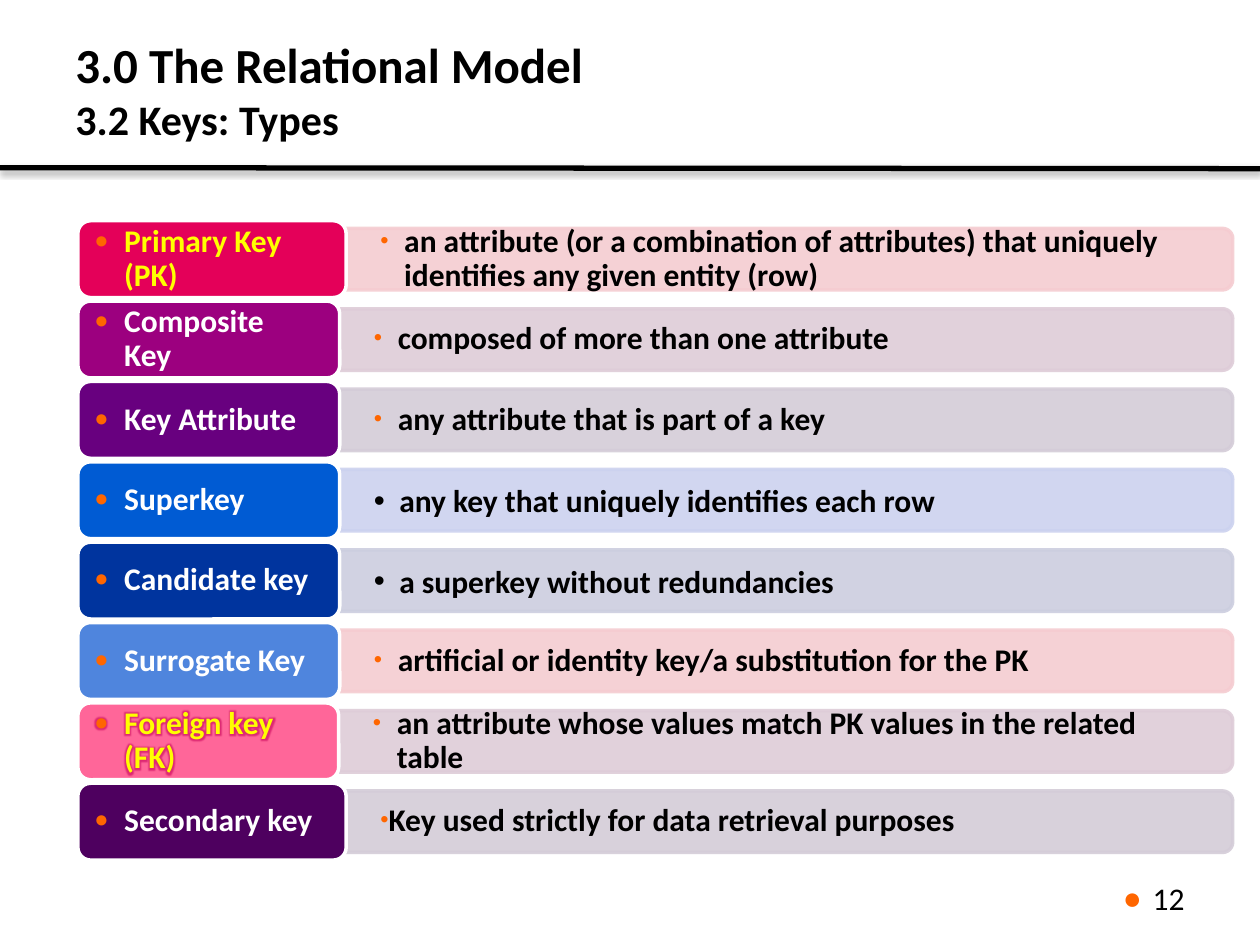
from lxml import etree
from pptx import Presentation
from pptx.dml.color import RGBColor
from pptx.enum.shapes import MSO_CONNECTOR, MSO_SHAPE
from pptx.enum.text import MSO_ANCHOR, PP_ALIGN
from pptx.oxml import parse_xml
from pptx.oxml.ns import nsdecls, qn
from pptx.util import Cm, Pt

FONT = "Calibri"
COLORS = {
    "text": "000000", "white": "FFFFFF", "yellow": "FFFF00", "bullet": "FF6600",
    "glow": "C8005A", "rose": "F5CCD1", "mauve": "DECCD8", "gray": "D4CCD8",
    "sky": "CCD2EF", "slate": "CCCEDF",
}
TITLE = [("3.0 The Relational Model", 28), ("3.2 Keys: Types", 24)]
PAGE = "12"

# label, label fill, label text colour, label width, description, bar colour, bullet style
ROWS = [
    ("Primary Key (PK)", "E40059", "yellow", 5.41,
     "an attribute (or a combination of attributes) that uniquely identifies any given entity (row)",
     "rose", "small"),
    ("Composite Key", "9C007F", "white", 5.28,
     "composed of more than one attribute", "mauve", "small"),
    ("Key Attribute", "68007F", "white", 5.28,
     "any attribute that is part of a key", "gray", "small"),
    ("Superkey", "005BD3", "white", 5.28,
     "any key that uniquely identifies each row", "sky", "plain"),
    ("Candidate key", "00349E", "white", 5.28,
     "a superkey without redundancies", "slate", "plain"),
    ("Surrogate Key", "4F85DD", "white", 5.28,
     "artificial or identity key/a substitution for the PK", "rose", "small"),
    ("Foreign key (FK)", "FF6699", "yellow", 5.26,
     "an attribute whose values match PK values in the related table", "mauve", "small"),
    ("Secondary key", "4E005F", "white", 5.41,
     "Key used strictly for data retrieval purposes", "gray", "tight"),
]
# bullet styles: character, colour, size %, indent in cm, line spacing
BULLETS = {
    "label": ("●", "bullet", 75, 0.6, 0.9),
    "small": ("•", "bullet", 75, 0.48, 0.9),
    "tight": ("•", "bullet", 75, 0, 0.9),
    "plain": ("•", "text", 100, 0.51, 1.0),
    "page": ("●", "bullet", 100, 0.6, 1.0),
}
GLOWING = "Foreign key (FK)"

# Row geometry in cm
LEFT, TOP, PITCH, LABEL_H = 1.57, 4.45, 1.62, 1.55
BAR_RIGHT, BAR_H, DESC_RIGHT, DESC_H = 24.85, 1.24, 24.78, 1.12


def rgb(name):
    return RGBColor.from_string(COLORS.get(name, name))


def style_run(r, size, color, bold=True):
    r.font.name, r.font.size, r.font.bold = FONT, Pt(size), bold
    r.font.color.rgb = rgb(color)


def set_frame(s, insets, anchor=MSO_ANCHOR.MIDDLE):
    tf = s.text_frame
    tf.word_wrap, tf.vertical_anchor = True, anchor
    tf.margin_left, tf.margin_top, tf.margin_right, tf.margin_bottom = map(Cm, insets)
    return tf


def write_bulleted(tf, text, style, color, align=PP_ALIGN.LEFT, bold=True):
    char, bullet_color, percent, indent, spacing = BULLETS[style]
    tf.text = text
    p = tf.paragraphs[0]
    p.alignment, p.line_spacing = align, spacing
    pPr = p._p.get_or_add_pPr()
    pPr.set("marL", str(Cm(indent)))
    pPr.set("indent", str(-Cm(indent)))
    clr = etree.SubElement(pPr, qn("a:buClr"))
    etree.SubElement(clr, qn("a:srgbClr"), val=COLORS[bullet_color])
    etree.SubElement(pPr, qn("a:buSzPct"), val=str(percent * 1000))
    etree.SubElement(pPr, qn("a:buFont"), typeface="Arial")
    etree.SubElement(pPr, qn("a:buChar"), char=char)
    style_run(p.runs[0], 18, color, bold)
    return p.runs[0]


def add_filled(shapes, kind, x, y, w, h, fill, line):
    s = shapes.add_shape(kind, Cm(x), Cm(y), Cm(w), Cm(h))
    s.shadow.inherit = False
    s.fill.solid()
    s.fill.fore_color.rgb = rgb(fill)
    s.line.color.rgb, s.line.width = rgb(line), Pt(2)
    return s


def add_row(shapes, i, row):
    label, fill, color, width, desc, bar_color, style = row
    y = TOP + i * PITCH
    x, mid = LEFT + width, y + LABEL_H / 2

    # Bar, a turned shape with its rounded corners on the right
    length = BAR_RIGHT - x
    bar = add_filled(shapes, MSO_SHAPE.ROUND_2_SAME_RECTANGLE, x + (length - BAR_H) / 2,
                     mid - length / 2, BAR_H, length, bar_color, bar_color)
    bar.rotation = 90
    for clr in bar._element.spPr.iter(qn("a:srgbClr")):
        etree.SubElement(clr, qn("a:alpha"), val="90000")

    # Description
    box = shapes.add_textbox(Cm(x), Cm(mid - DESC_H / 2), Cm(DESC_RIGHT - x), Cm(DESC_H))
    write_bulleted(set_frame(box, (0.69, 0.36, 0.69, 0.36)), desc, style, "text")

    # Label
    s = add_filled(shapes, MSO_SHAPE.ROUNDED_RECTANGLE, LEFT, y, width, LABEL_H, fill, "white")
    r = write_bulleted(set_frame(s, (0.26, 0.18, 0.4, 0.18)), label, "label", color)
    if label == GLOWING:
        r._r.rPr.find(qn("a:solidFill")).addnext(parse_xml(
            f'<a:effectLst {nsdecls("a")}><a:glow rad="76200"><a:srgbClr val="{COLORS["glow"]}">'
            '<a:alpha val="60000"/></a:srgbClr></a:glow></a:effectLst>'))


def main():
    prs = Presentation()
    prs.slide_width, prs.slide_height = Cm(25.4), Cm(19.05)
    shapes = prs.slides.add_slide(prs.slide_layouts[6]).shapes

    # Rule under the title
    rule = shapes.add_connector(MSO_CONNECTOR.STRAIGHT, 0, Cm(3.38), Cm(25.4), Cm(3.4))
    rule.line.color.rgb, rule.line.width = rgb("text"), Pt(3)
    rule._element.spPr.append(parse_xml(
        f'<a:effectLst {nsdecls("a")}><a:outerShdw blurRad="{Pt(3.1)}" dist="{Pt(1.8)}" '
        f'dir="5400000" rotWithShape="0"><a:srgbClr val="{COLORS["text"]}">'
        '<a:alpha val="35000"/></a:srgbClr></a:outerShdw></a:effectLst>'))

    # Title
    box = shapes.add_textbox(Cm(1.27), Cm(0.43), Cm(22.86), Cm(2.74))
    p = set_frame(box, (0.25, 0.13, 0.25, 0.13)).paragraphs[0]
    for i, (text, size) in enumerate(TITLE):
        if i:
            p.add_line_break()
        r = p.add_run()
        r.text = text
        style_run(r, size, "text")

    # Key types
    for i, row in enumerate(ROWS):
        add_row(shapes, i, row)

    # Page number
    box = shapes.add_textbox(Cm(18.62), Cm(17.6), Cm(5.51), Cm(1.02))
    tf = set_frame(box, (0.25, 0.13, 0.25, 0.13), MSO_ANCHOR.TOP)
    write_bulleted(tf, PAGE, "page", "text", PP_ALIGN.RIGHT, bold=False)

    prs.save("out.pptx")


if __name__ == "__main__":
    main()
